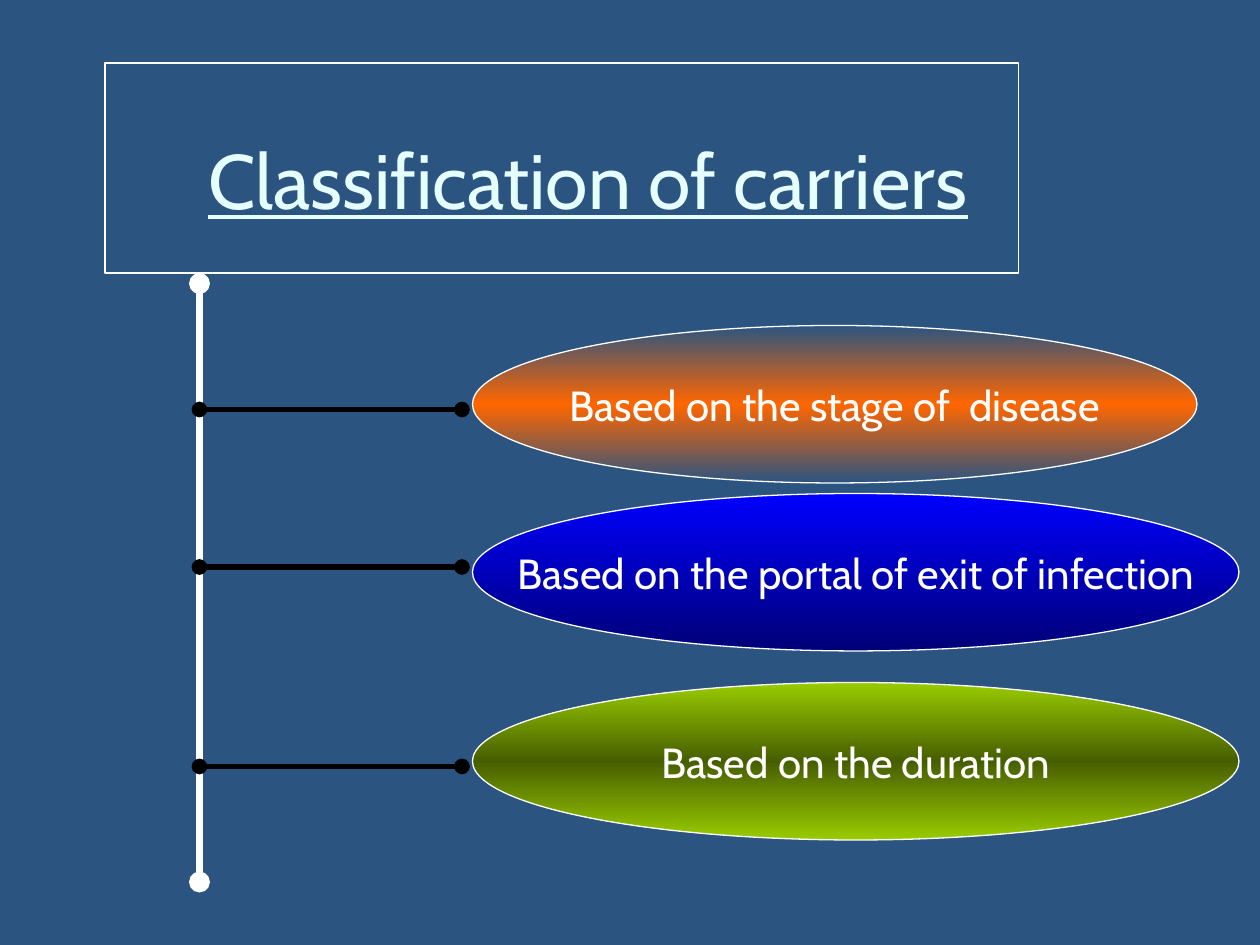
from copy import deepcopy
from dataclasses import dataclass

from lxml.etree import SubElement
from pptx import Presentation
from pptx.dml.color import RGBColor
from pptx.enum.shapes import MSO_CONNECTOR, MSO_SHAPE
from pptx.enum.text import MSO_ANCHOR, PP_ALIGN
from pptx.oxml.ns import qn
from pptx.util import Pt

COLORS = {
    "background": "2B5481",
    "white": "FFFFFF",
    "black": "000000",
    "title": "E5FFFF",
    "orange": "FF6600",
    "blue": "0000FF",
    "navy": "000076",
    "lime": "99CC00",
    "olive": "475E00",
}
FONT = "Cabin"
TRUNK_X = 114
BRANCH_END = 264
ELLIPSE_LEFT = 270
ELLIPSE_HEIGHT = 90


@dataclass
class Category:
    text: str
    top: float
    width: float
    branch_y: float
    gradient: tuple[str, ...]


CATEGORIES = [
    Category("Based on the duration", 390, 438, 438, ("lime", "olive", "lime")),
    Category("Based on the portal of exit of infection", 282, 438, 324, ("blue", "navy")),
    Category("Based on the stage of  disease", 186, 414, 234,
             ("background", "orange", "background")),
]


def color(name: str) -> RGBColor:
    return RGBColor.from_string(COLORS[name])


def format_text(text_frame, size: float, color_name: str) -> None:
    text_frame.vertical_anchor = MSO_ANCHOR.MIDDLE
    paragraph = text_frame.paragraphs[0]
    paragraph.alignment = PP_ALIGN.CENTER
    font = paragraph.runs[0].font
    font.name = FONT
    font.size = Pt(size)
    font.color.rgb = color(color_name)


def add_outlined(slide, kind, left: float, top: float, width: float, height: float):
    shape = slide.shapes.add_shape(kind, Pt(left), Pt(top), Pt(width), Pt(height))
    shape.shadow.inherit = False
    shape.line.color.rgb = color("white")
    shape.line.width = Pt(0.75)
    return shape


def fill_gradient(shape, names: tuple[str, ...]) -> None:
    fill = shape.fill
    fill.gradient()
    fill.gradient_angle = 270
    stop_list = shape._element.spPr.find(qn("a:gradFill")).find(qn("a:gsLst"))
    for _ in names[2:]:
        stop_list.append(deepcopy(stop_list[0]))
    for index, (stop, name) in enumerate(zip(fill.gradient_stops, names)):
        stop.position = index / (len(names) - 1)
        stop.color.rgb = color(name)


def add_category(slide, category: Category) -> None:
    shape = add_outlined(slide, MSO_SHAPE.OVAL, ELLIPSE_LEFT, category.top,
                         category.width, ELLIPSE_HEIGHT)
    fill_gradient(shape, category.gradient)
    shape.text_frame.text = category.text
    shape.text_frame.word_wrap = False
    format_text(shape.text_frame, 24, "white")


def add_dotted_line(slide, start: tuple[float, float], end: tuple[float, float],
                    color_name: str, width: float) -> None:
    connector = slide.shapes.add_connector(
        MSO_CONNECTOR.STRAIGHT, *(Pt(value) for value in start + end))
    connector.line.color.rgb = color(color_name)
    connector.line.width = Pt(width)
    properties = connector._element.spPr
    outline = properties.find(qn("a:ln"))
    for tag in ("a:headEnd", "a:tailEnd"):
        SubElement(outline, qn(tag), type="oval")
    SubElement(properties, qn("a:effectLst"))


def add_title(slide) -> None:
    panel = add_outlined(slide, MSO_SHAPE.RECTANGLE, 60, 36, 522, 120)
    panel.fill.solid()
    panel.fill.fore_color.rgb = color("background")
    title = slide.shapes.title
    panel._element.addnext(title._element)
    title.left, title.top, title.width, title.height = Pt(-6), Pt(48), Pt(684), Pt(108)
    title.text_frame.text = "Classification of carriers"
    format_text(title.text_frame, 44, "title")
    title.text_frame.paragraphs[0].runs[0].font.underline = True


def main() -> None:
    presentation = Presentation()
    presentation.slide_width, presentation.slide_height = Pt(720), Pt(540)
    slide = presentation.slides.add_slide(presentation.slide_layouts[5])
    slide.background.fill.solid()
    slide.background.fill.fore_color.rgb = color("background")
    for category in CATEGORIES:
        add_category(slide, category)
    add_title(slide)
    add_dotted_line(slide, (TRUNK_X, 162), (TRUNK_X, 504), "white", 4)
    for category in reversed(CATEGORIES):
        add_dotted_line(slide, (TRUNK_X, category.branch_y),
                        (BRANCH_END, category.branch_y), "black", 3)
    presentation.save("out.pptx")


if __name__ == "__main__":
    main()
